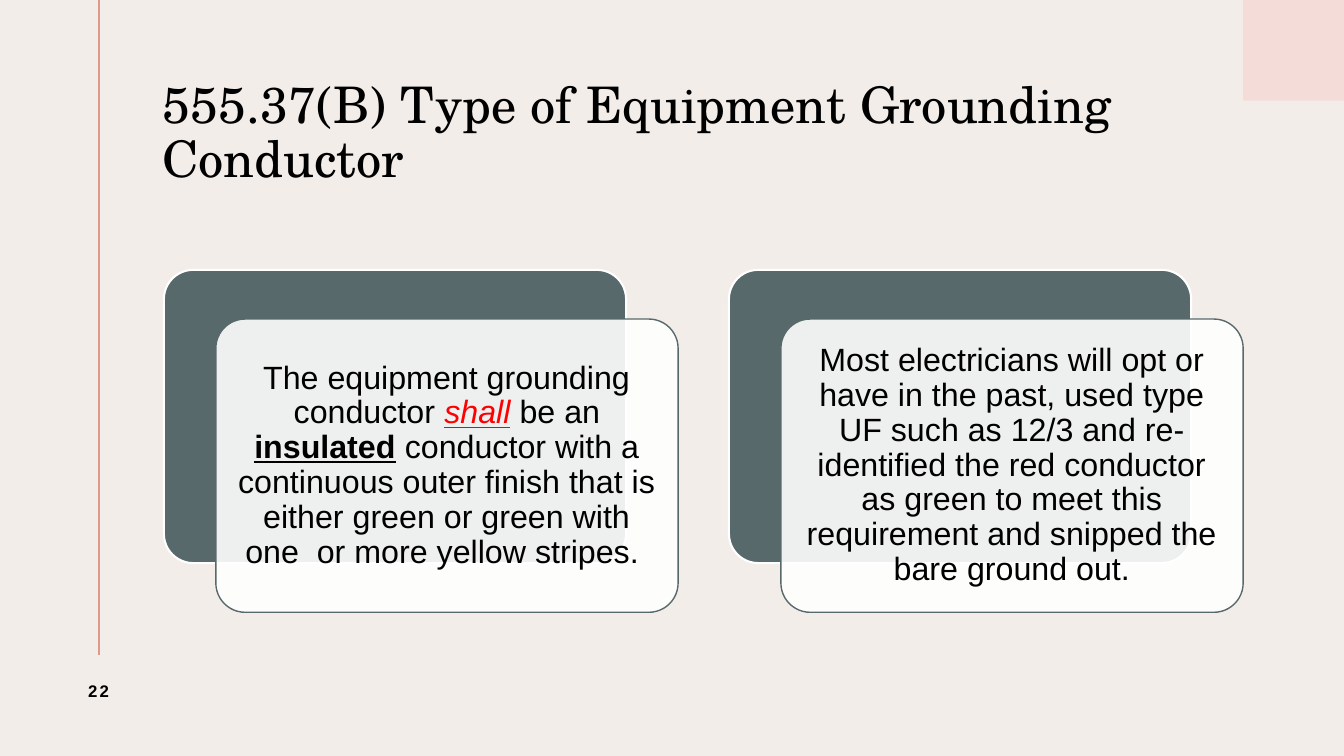
from lxml import etree
from pptx import Presentation
from pptx.dml.color import RGBColor
from pptx.enum.shapes import MSO_CONNECTOR, MSO_SHAPE
from pptx.enum.text import MSO_ANCHOR, MSO_AUTO_SIZE, PP_ALIGN
from pptx.oxml.ns import qn
from pptx.util import Cm, Pt

LEFT, CENTER = PP_ALIGN.LEFT, PP_ALIGN.CENTER
MIDDLE, NO_FIT = MSO_ANCHOR.MIDDLE, MSO_AUTO_SIZE.NONE
RECT, ROUNDED = MSO_SHAPE.RECTANGLE, MSO_SHAPE.ROUNDED_RECTANGLE
STRAIGHT = MSO_CONNECTOR.STRAIGHT

COLORS = {
    "background": "F3EDEA", "corner": "F4DDD8", "rule": "DF998B",
    "slate": "58696B", "white": "FFFFFF", "black": "000000", "red": "FF0000",
}
TITLE = {"name": "TeX Gyre Schola", "size": Pt(36), "bold": False}
NUMBER = {"name": "Arial", "size": Pt(12), "bold": True}
BODY = {"name": "Arial", "size": Pt(23)}
SHALL = {"italic": True, "underline": True}
INSULATED = {"bold": True, "underline": True}

CARDS = [
    [("The equipment grounding conductor ", {}, "black"),
     ("shall", SHALL, "red"),
     (" be an ", {}, "black"),
     ("insulated", INSULATED, "black"),
     (" conductor with a continuous outer finish that is either green or "
      "green with one  or more yellow stripes. ", {}, "black")],
    [("Most electricians will opt or have in the past, used type UF such as "
      "12/3 and re-identified the red conductor as green to meet this "
      "requirement and snipped the bare ground out.", {}, "black")],
]


def rgb(name):
    return RGBColor.from_string(COLORS[name])


def set_frame(tf, margins):
    """Set up the wrapped, middle-anchored frame; margins are left, top, right, bottom in cm."""
    tf.word_wrap = True
    tf.auto_size = NO_FIT
    tf.vertical_anchor = MIDDLE
    for side, margin in zip(("left", "top", "right", "bottom"), margins):
        setattr(tf, f"margin_{side}", Cm(margin))


def add_run(p, text, formats, color="black"):
    r = p.add_run()
    r.text = text
    for name, value in formats.items():
        setattr(r.font, name, value)
    r.font.color.rgb = rgb(color)
    return r


def add_box(s, preset, x, y, w, h, fill, line=None, line_width=1):
    sp = s.shapes.add_shape(preset, Cm(x), Cm(y), Cm(w), Cm(h))
    sp.shadow.inherit = False
    sp.fill.solid()
    sp.fill.fore_color.rgb = rgb(fill)
    if line:
        sp.line.color.rgb = rgb(line)
        sp.line.width = Pt(line_width)
    else:
        sp.line.fill.background()
    return sp


def set_opacity(sp, percent):
    color = sp._element.spPr.find(qn("a:solidFill")).find(qn("a:srgbClr"))
    etree.SubElement(color, qn("a:alpha")).set("val", str(percent * 1000))


def add_decoration(s, w):
    """Draw the corner square and the vertical rule on a slide of the given width."""
    side, rule_x = 2.54, 2.49
    add_box(s, RECT, w - side, 0, side, side, "corner")
    rule = s.shapes.add_connector(STRAIGHT, Cm(rule_x), 0, Cm(rule_x), Cm(16.51))
    rule.line.color.rgb = rgb("rule")
    rule.line.width = Pt(1.5)
    etree.SubElement(rule._element.spPr, qn("a:effectLst"))


def add_title(s, x, y, w, h, text):
    sp = s.shapes.title
    sp.left, sp.top, sp.width, sp.height = Cm(x), Cm(y), Cm(w), Cm(h)
    set_frame(sp.text_frame, (0, 0.13, 0.25, 0.13))
    p = sp.text_frame.paragraphs[0]
    p.alignment = LEFT
    p.line_spacing = 0.9
    add_run(p, text, TITLE)


def add_slide_number(s, x, y, w, h, text):
    tf = s.shapes.add_textbox(Cm(x), Cm(y), Cm(w), Cm(h)).text_frame
    set_frame(tf, (0.25, 0.13, 0.25, 0.13))
    p = tf.paragraphs[0]
    p.alignment = CENTER
    p.space_after = Pt(6)
    r = add_run(p, text, NUMBER)
    r.font._element.set("spc", "150")


def add_card(s, x, y, w, h, runs):
    """Fill the box with a slate panel and a translucent text panel offset from it."""
    dx, dy = 1.31, 1.24
    panel_w, panel_h = w - dx, h - dy
    back = add_box(s, ROUNDED, x, y, panel_w, panel_h, "slate", "white", 1.5)
    front = add_box(s, ROUNDED, x + dx, y + dy, panel_w, panel_h, "white", "slate")
    for panel in (back, front):
        panel.adjustments[0] = 0.1
    set_opacity(front, 90)
    set_frame(front.text_frame, (0.25,) * 4)
    p = front.text_frame.paragraphs[0]
    p.alignment = CENTER
    p.line_spacing = 0.9
    for text, formats, color in runs:
        add_run(p, text, BODY | formats, color)


def main():
    prs = Presentation()
    slide_w = 33.87
    prs.slide_width, prs.slide_height = Cm(slide_w), Cm(19.05)
    s = prs.slides.add_slide(prs.slide_layouts[5])
    s.background.fill.solid()
    s.background.fill.fore_color.rgb = rgb("background")

    add_decoration(s, slide_w)
    add_title(s, 4.09, 1.4, 27.25, 3.96, "555.37(B) Type of Equipment Grounding Conductor")
    add_slide_number(s, 1.14, 16.51, 2.69, 1.8, "22")
    card_x, card_w, gap = 4.13, 12.96, 1.28
    for i, runs in enumerate(CARDS):
        add_card(s, card_x + i * (card_w + gap), 6.8, card_w, 8.63, runs)

    prs.save("out.pptx")


if __name__ == "__main__":
    main()
